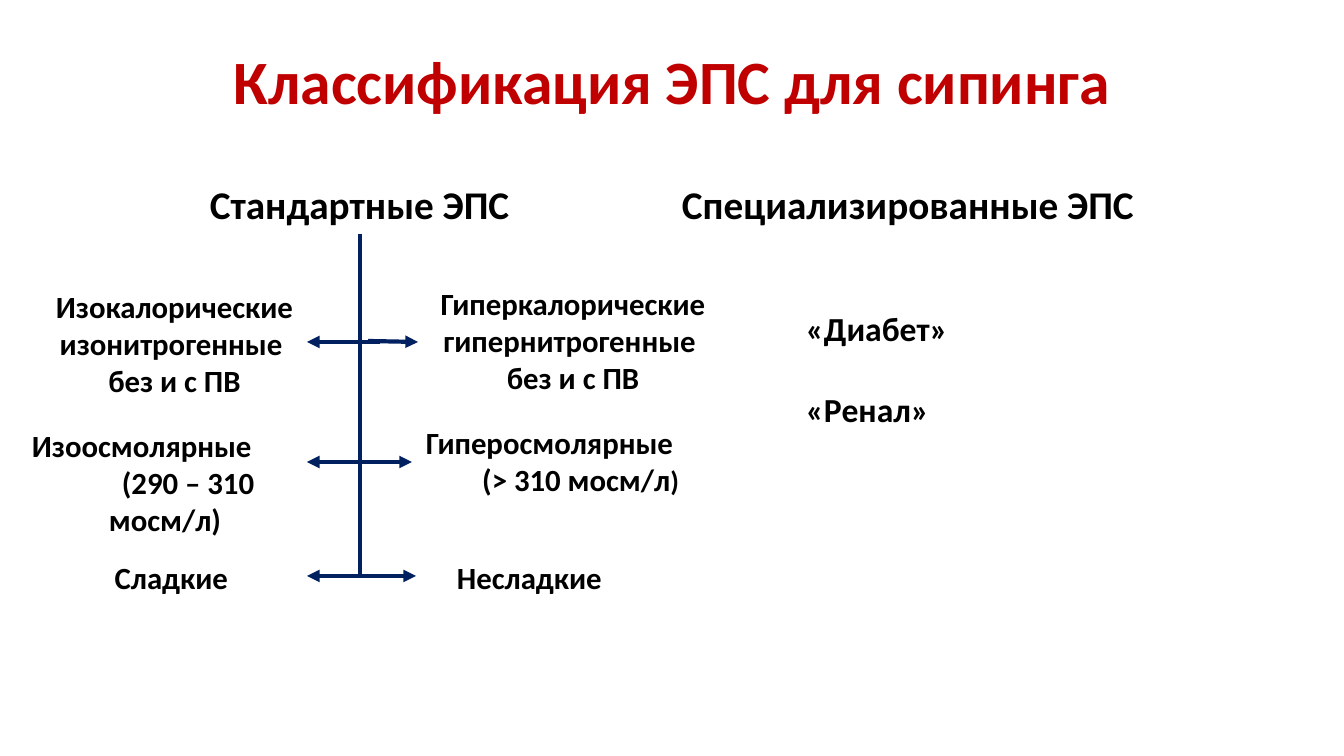
import pptx
import pptx.util
import pptx.dml.color
import pptx.enum.shapes
import pptx.enum.text
import pptx.oxml.ns
import lxml.etree

PX = 9071  # EMU in one px
NAVY, RED, BLACK = "002060", "C00000", "000000"
ALIGN = pptx.enum.text.PP_ALIGN
LEFT, CENTER, RIGHT = ALIGN.LEFT, ALIGN.CENTER, ALIGN.RIGHT


def rgb(code):
    return pptx.dml.color.RGBColor.from_string(code)


def write(frame, text, size=22, color=BLACK, align=CENTER, before=0,
          margin=0, indent=0, spacing=1.0, small_end=""):
    """Add one paragraph; small_end is set 2 pt smaller after the text."""
    paragraph = frame.paragraphs[0]
    if paragraph.runs:
        paragraph = frame.add_paragraph()
    paragraph.alignment = align
    paragraph.space_before = pptx.util.Pt(before)
    paragraph.line_spacing = spacing
    if margin or indent:
        properties = paragraph._p.get_or_add_pPr()
        properties.set("marL", str(margin * PX))
        properties.set("indent", str(indent * PX))
    for part, points in ((text, size), (small_end, size - 2)):
        if part:
            run = paragraph.add_run()
            run.text = part
            run.font.name = "Calibri"
            run.font.size = pptx.util.Pt(points)
            run.font.bold = True
            run.font.color.rgb = rgb(color)


deck = pptx.Presentation()
deck.slide_width, deck.slide_height = 1344 * PX, 756 * PX
slide = deck.slides.add_slide(deck.slide_layouts[5])

# Title
title = slide.shapes.title
title.left, title.top, title.width, title.height = 93 * PX, 12 * PX, 1159 * PX, 146 * PX
title.text_frame.vertical_anchor = pptx.enum.text.MSO_ANCHOR.MIDDLE
write(title.text_frame, "Классификация ЭПС для сипинга", size=44, color=RED, spacing=0.9)

# Headings and classes: left, top, width, height, paragraphs
labels = [
    (147, 175, 425, 57, [dict(text="Стандартные ЭПС", size=28)]),
    (672, 175, 487, 57, [dict(text="Специализированные ЭПС", size=28, align=LEFT)]),
    (22, 283, 305, 122, [dict(text="Изокалорические изонитрогенные "),
                         dict(text="без и с ПВ")]),
    (409, 280, 328, 122, [dict(text="Гиперкалорические гипернитрогенные "),
                          dict(text="без и с ПВ")]),
    (22, 422, 285, 122, [dict(text="Изоосмолярные", align=LEFT),
                         dict(text="(290 – 310 мосм/л)", align=LEFT, margin=77, indent=13)]),
    (416, 419, 273, 85, [dict(text="Гиперосмолярные", align=LEFT),
                         dict(text="(> 310 мосм/л", align=RIGHT, small_end=")")]),
    (86, 554, 177, 47, [dict(text="Сладкие", small_end=" ")]),
    (432, 554, 201, 47, [dict(text="Несладкие", small_end=" ")]),
    (796, 303, 242, 132, [dict(text="«Диабет»", size=24, align=LEFT),
                          dict(text="«Ренал»", size=24, align=LEFT, before=29)]),
]
for left, top, width, height, paragraphs in labels:
    frame = slide.shapes.add_textbox(left * PX, top * PX, width * PX, height * PX).text_frame
    frame.word_wrap = True
    frame.auto_size = pptx.enum.text.MSO_AUTO_SIZE.SHAPE_TO_FIT_TEXT
    for paragraph in paragraphs:
        write(frame, **paragraph)

# Trunk and its branches: start x, start y, end x, end y, arrowhead
TRUNK, BRANCH_END = 360, 307
branches = [
    (TRUNK, 234, TRUNK, 576, False),
    (368, 341, 418, 342, True),
    (380, 342, BRANCH_END, 342, True),
]
for y, right_end in ((462, 412), (576, 416)):
    for end in (right_end, BRANCH_END):
        branches.append((TRUNK, y, end, y, True))

for x1, y1, x2, y2, arrow in branches:
    branch = slide.shapes.add_connector(pptx.enum.shapes.MSO_CONNECTOR.STRAIGHT,
                                        x1 * PX, y1 * PX, x2 * PX, y2 * PX)
    branch.line.color.rgb = rgb(NAVY)
    branch.line.width = pptx.util.Pt(3)
    if arrow:
        lxml.etree.SubElement(branch.line._get_or_add_ln(),
                              pptx.oxml.ns.qn("a:tailEnd"), type="triangle")
    lxml.etree.SubElement(branch._element.spPr, pptx.oxml.ns.qn("a:effectLst"))

deck.save("out.pptx")
